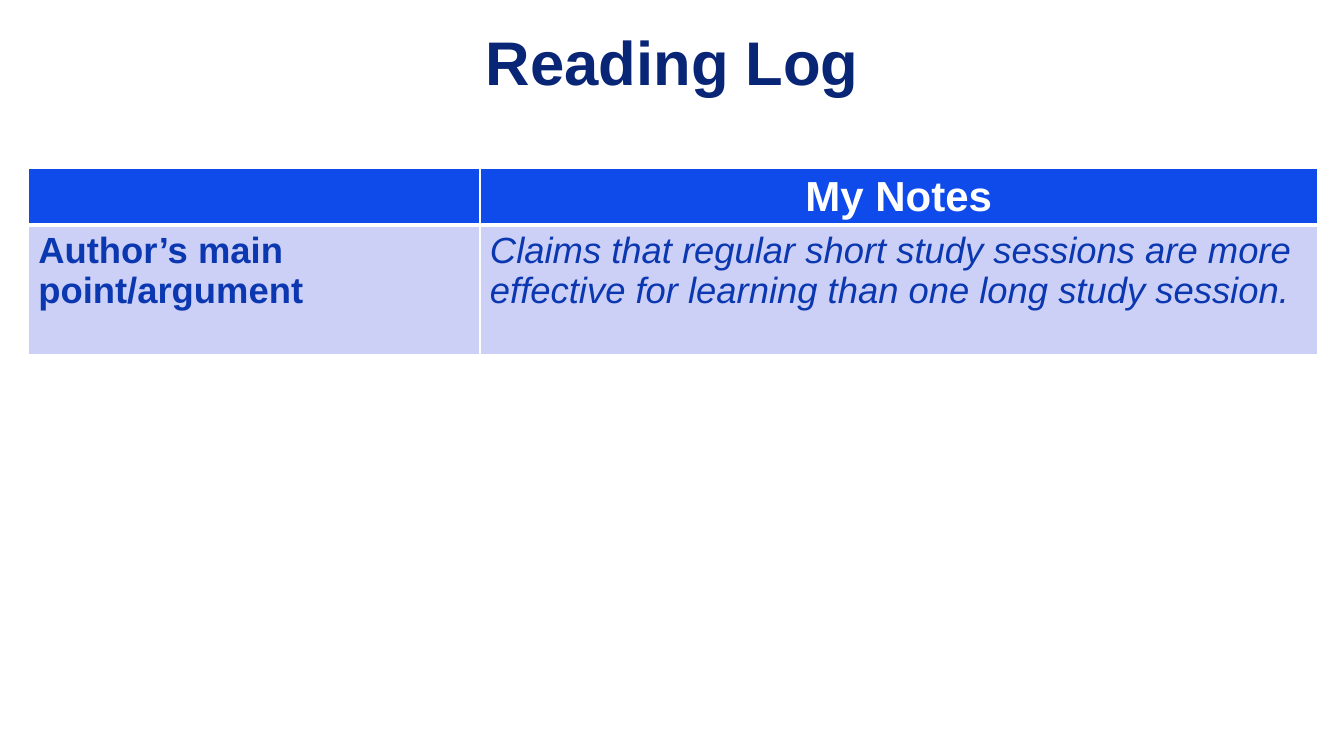
from lxml import etree
from pptx import Presentation
from pptx.dml.color import RGBColor
from pptx.enum.text import MSO_AUTO_SIZE, PP_ALIGN
from pptx.oxml.ns import qn
from pptx.util import Inches, Pt

CENTER = PP_ALIGN.CENTER
LEFT = PP_ALIGN.LEFT
GROW = MSO_AUTO_SIZE.SHAPE_TO_FIT_TEXT

COLORS = {
    "white": "FFFFFF",
    "title": "082576",
    "header": "0F4BEB",
    "body": "CCD0F7",
    "note": "0B38B0",
}
FORMATS = {
    "title": {"size": Pt(44), "bold": True, "italic": False},
    "header": {"size": Pt(30), "bold": True, "italic": False},
    "label": {"size": Pt(26), "bold": True, "italic": False},
    "note": {"size": Pt(26), "bold": False, "italic": True},
}


class LogSlide:
    font_name = "Arial"

    def __init__(self, deck):
        self.slide = deck.slides.add_slide(deck.slide_layouts[6])

    def set_text(self, frame, text, style, color, align):
        paragraph = frame.paragraphs[0]
        paragraph.text = text
        paragraph.alignment = align
        paragraph.font.name = self.font_name
        paragraph.font.color.rgb = RGBColor.from_string(COLORS[color])
        for attribute, value in FORMATS[style].items():
            setattr(paragraph.font, attribute, value)

    def title(self, text, left, top, width, height):
        box = self.slide.shapes.add_textbox(
            Inches(left), Inches(top), Inches(width), Inches(height))
        frame = box.text_frame
        frame.word_wrap = True
        frame.auto_size = GROW
        self.set_text(frame, text, "title", "title", CENTER)

    def border(self, cell, widths):
        properties = cell._tc.get_or_add_tcPr()
        for side, width in widths.items():
            line = etree.SubElement(properties, qn(f"a:ln{side}"), w=str(Pt(width)))
            fill = etree.SubElement(line, qn("a:solidFill"))
            etree.SubElement(fill, qn("a:srgbClr"), val=COLORS["white"])

    def table(self, rows, left, top, widths, heights):
        table = self.slide.shapes.add_table(
            len(rows), len(widths), Inches(left), Inches(top),
            Inches(sum(widths)), Inches(sum(heights))).table
        for column, width in zip(table.columns, widths):
            column.width = Inches(width)
        for row, height in zip(table.rows, heights):
            row.height = Inches(height)
        for row_index, entries in enumerate(rows):
            is_header = row_index == 0
            edges = {"L": 1, "R": 1, "T": 1 if is_header else 3, "B": 3 if is_header else 1}
            for column_index, (text, style, color, align) in enumerate(entries):
                cell = table.cell(row_index, column_index)
                self.border(cell, edges)
                cell.fill.solid()
                cell.fill.fore_color.rgb = RGBColor.from_string(
                    COLORS["header" if is_header else "body"])
                self.set_text(cell.text_frame, text, style, color, align)


def main():
    deck = Presentation()
    deck.slide_width = Inches(13.33)
    deck.slide_height = Inches(7.5)
    log = LogSlide(deck)
    log.table(
        [
            [("", "header", "white", CENTER),
             ("My Notes", "header", "white", CENTER)],
            [("Author’s main point/argument", "label", "note", LEFT),
             ("Claims that regular short study sessions are more effective "
              "for learning than one long study session.", "note", "note", LEFT)],
        ],
        0.28, 1.67, [4.48, 8.31], [0.48, 1.28])
    log.title("Reading Log", 2.56, 0.19, 8.22, 0.84)
    deck.save("out.pptx")


if __name__ == "__main__":
    main()
